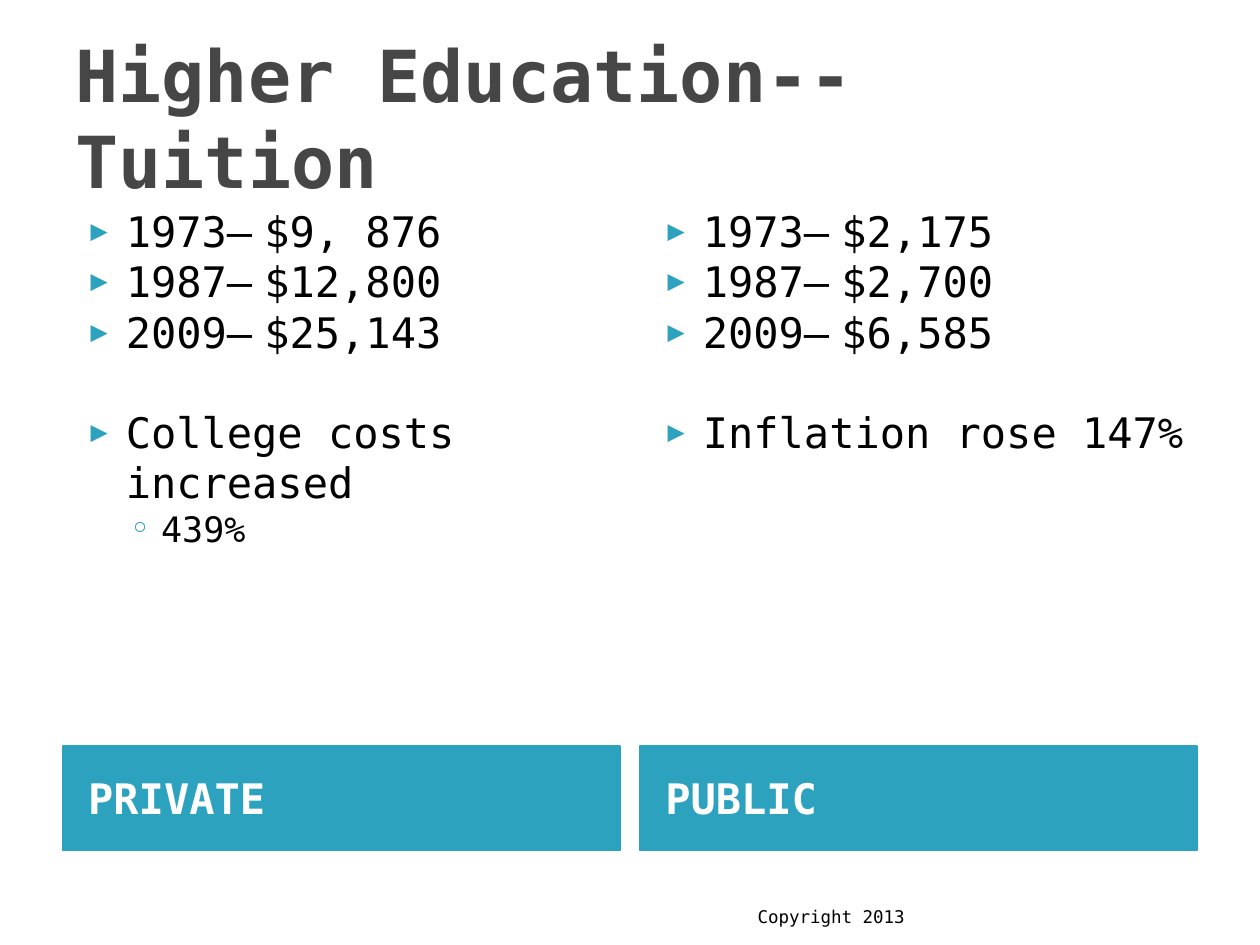
from dataclasses import dataclass

from lxml.etree import SubElement
from pptx import Presentation
from pptx.dml.color import RGBColor
from pptx.enum.shapes import MSO_SHAPE as Preset
from pptx.enum.text import MSO_ANCHOR as Anchor, PP_ALIGN as Align
from pptx.oxml.ns import qn
from pptx.util import Inches, Pt

FONT = "DejaVu Sans Mono"
TEAL = "2DA2BF"
BLACK = "000000"
WHITE = "FFFFFF"
GREY = "464646"
MARGIN = 0.5
COLUMN_WIDTH = 4.42
COLUMN_STEP = 4.58
BLANK_LINE = 28.5


@dataclass(frozen=True)
class Bullet:
    symbol: str
    margin: float
    hanging: float
    size: int
    scale: int


TRIANGLE = Bullet("▶", 0.4, 0.28, 24, 68)
RING = Bullet("◦", 0.68, 0.25, 20, 100)


@dataclass(frozen=True)
class Item:
    text: str
    bullet: Bullet = TRIANGLE
    before: float = 0


@dataclass(frozen=True)
class Column:
    heading: str
    items: tuple[Item, ...]


COLUMNS = (
    Column("PRIVATE", (
        Item("1973—\t$9, 876"),
        Item("1987—\t$12,800"),
        Item("2009—\t$25,143"),
        Item("College costs increased", before=BLANK_LINE),
        Item("439%", RING),
    )),
    Column("PUBLIC", (
        Item("1973—\t$2,175"),
        Item("1987—\t$2,700"),
        Item("2009—\t$6,585"),
        Item("Inflation rose 147%", before=BLANK_LINE),
    )),
)


def color(value: str) -> RGBColor:
    return RGBColor.from_string(value)


def style(paragraph, size: float, shade: str, bold: bool = False) -> None:
    font = paragraph.font
    font.name = FONT
    font.size = Pt(size)
    font.bold = bold
    font.color.rgb = color(shade)


def add_text(page, left: float, top: float, width: float, height: float, anchor: Anchor):
    box = page.shapes.add_textbox(Inches(left), Inches(top), Inches(width), Inches(height))
    box.text_frame.word_wrap = True
    box.text_frame.vertical_anchor = anchor
    return box.text_frame


def add_bullet(paragraph, bullet: Bullet) -> None:
    properties = paragraph._p.get_or_add_pPr()
    properties.set("marL", str(Inches(bullet.margin)))
    properties.set("indent", str(-Inches(bullet.hanging)))
    shade = SubElement(properties, qn("a:buClr"))
    SubElement(shade, qn("a:srgbClr"), val=TEAL)
    SubElement(properties, qn("a:buSzPct"), val=str(bullet.scale * 1000))
    SubElement(properties, qn("a:buFont"), typeface=FONT)
    SubElement(properties, qn("a:buChar"), char=bullet.symbol)


def add_heading(page, left: float, text: str) -> None:
    bar = page.shapes.add_shape(
        Preset.RECTANGLE, Inches(left), Inches(5.92), Inches(COLUMN_WIDTH), Inches(0.83))
    bar.shadow.inherit = False
    bar.fill.solid()
    bar.fill.fore_color.rgb = color(TEAL)
    bar.line.color.rgb = color(TEAL)
    bar.line.width = Pt(0.75)
    frame = bar.text_frame
    frame.word_wrap = True
    frame.margin_left = Inches(0.2)
    frame.vertical_anchor = Anchor.MIDDLE
    paragraph = frame.paragraphs[0]
    paragraph.text = text
    paragraph.alignment = Align.LEFT
    style(paragraph, 24, WHITE, bold=True)


def add_items(page, left: float, items: tuple[Item, ...]) -> None:
    frame = add_text(page, left, 1.58, COLUMN_WIDTH, 4.31, Anchor.TOP)
    for index, item in enumerate(items):
        paragraph = frame.add_paragraph() if index else frame.paragraphs[0]
        paragraph.text = item.text
        add_bullet(paragraph, item.bullet)
        if item.before:
            paragraph.space_before = Pt(item.before)
        style(paragraph, item.bullet.size, BLACK)


def main() -> None:
    deck = Presentation()
    deck.slide_width = Inches(10)
    deck.slide_height = Inches(7.5)
    page = deck.slides.add_slide(deck.slide_layouts[6])

    title = add_text(page, MARGIN, 0.3, 9, 1.25, Anchor.MIDDLE).paragraphs[0]
    title.text = "Higher Education-- Tuition"
    style(title, 41, GREY, bold=True)

    for index, column in enumerate(COLUMNS):
        left = MARGIN + index * COLUMN_STEP
        add_heading(page, left, column.heading)
        add_items(page, left, column.items)

    footer = add_text(page, 4.79, 7.01, 2.57, 0.4, Anchor.BOTTOM).paragraphs[0]
    footer.text = "Copyright 2013 "
    footer.alignment = Align.RIGHT
    style(footer, 10, BLACK)

    deck.save("out.pptx")


if __name__ == "__main__":
    main()
